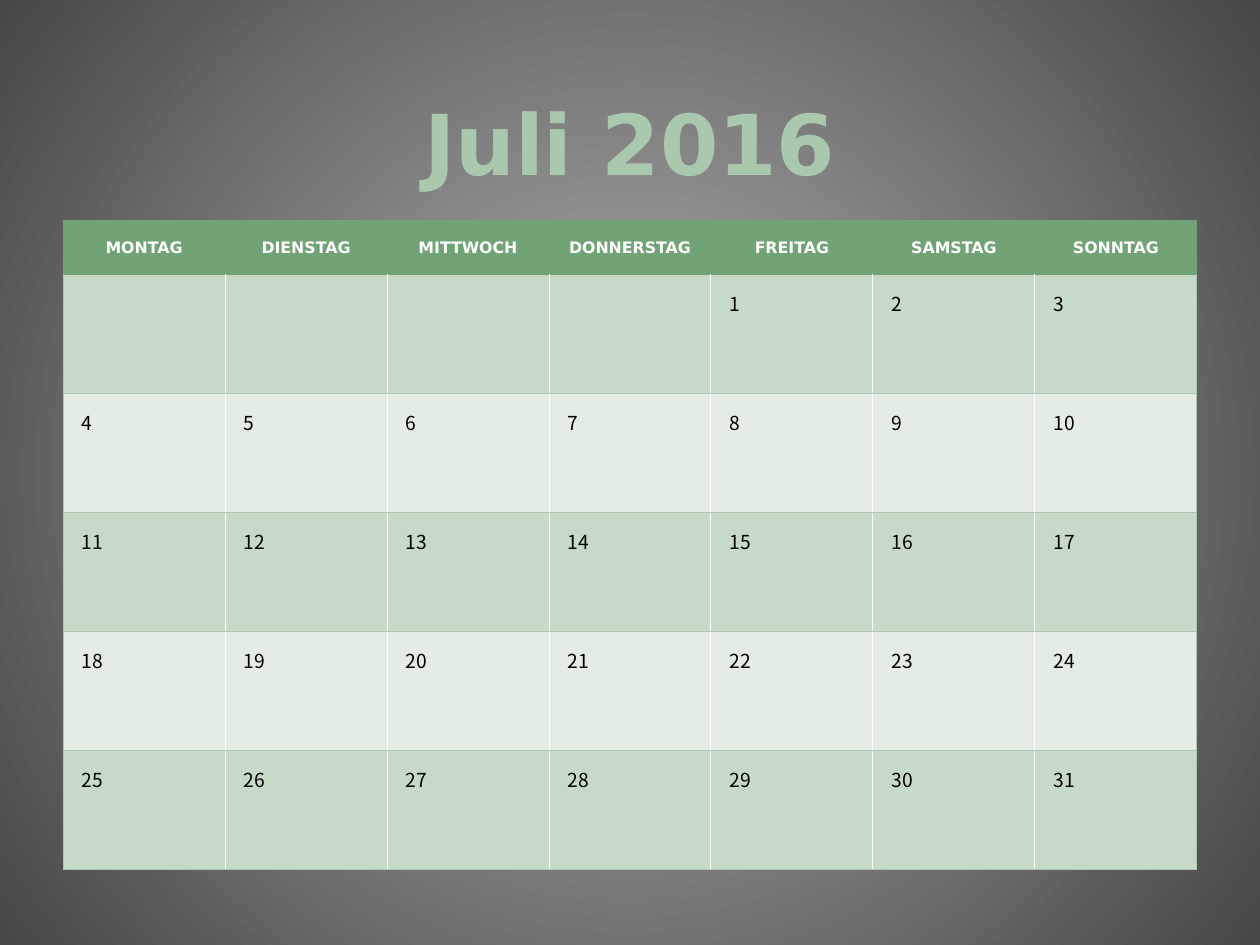
import dataclasses

import lxml.etree
import pptx
import pptx.dml.color
import pptx.enum.text
import pptx.oxml.ns
import pptx.util

WEEKDAYS = ["MONTAG", "DIENSTAG", "MITTWOCH", "DONNERSTAG", "FREITAG", "SAMSTAG", "SONNTAG"]
WEEKS = 5
FIRST_WEEKDAY = 4  # the month begins on a Friday
DAYS = 31


@dataclasses.dataclass(frozen=True)
class Theme:
    heading_font: str = "DejaVu Sans"
    day_font: str = "Noto Sans CJK SC"
    title_size: float = 48
    weekday_size: float = 9
    day_size: float = 11
    rule_width: float = 0.5
    centre: str = "B1B1B1"
    edge: str = "474747"
    header: str = "72A376"
    accent: str = "AAC8AD"
    bands: tuple = ("C7DAC8", "E3EDE4")
    white: str = "FFFFFF"
    black: str = "000000"


THEME = Theme()


def rgb(value):
    return pptx.dml.color.RGBColor.from_string(value)


def add_span(para, text, font, size, colour, bold=False):
    span = para.add_run()
    span.text = text
    span.font.name = font
    span.font.size = pptx.util.Pt(size)
    span.font.bold = bold
    span.font.color.rgb = rgb(colour)


def set_borders(cell, left, right, top, bottom):
    """Colour the four sides of a cell; None leaves a side without a line."""
    properties = cell._tc.get_or_add_tcPr()
    for place, (side, colour) in enumerate(zip("LRTB", (left, right, top, bottom))):
        line = lxml.etree.Element(pptx.oxml.ns.qn(f"a:ln{side}"))
        line.set("w", str(pptx.util.Pt(THEME.rule_width)))
        if colour is None:
            lxml.etree.SubElement(line, pptx.oxml.ns.qn("a:noFill"))
        else:
            fill = lxml.etree.SubElement(line, pptx.oxml.ns.qn("a:solidFill"))
            lxml.etree.SubElement(fill, pptx.oxml.ns.qn("a:srgbClr"), val=colour)
        properties.insert(place, line)


def paint_background(page):
    fill = page.background.fill
    fill.gradient()
    for stop, colour, position in zip(fill.gradient_stops, (THEME.centre, THEME.edge), (0, 1)):
        stop.color.rgb = rgb(colour)
        stop.position = position
    # Turn the linear gradient into a circular one around the middle
    gradient = page._element.find(".//" + pptx.oxml.ns.qn("a:gradFill"))
    linear = gradient.find(pptx.oxml.ns.qn("a:lin"))
    circle = lxml.etree.Element(pptx.oxml.ns.qn("a:path"), path="circle")
    lxml.etree.SubElement(circle, pptx.oxml.ns.qn("a:fillToRect"),
                          l="50000", t="50000", r="50000", b="50000")
    gradient.replace(linear, circle)


def place_title(page, box, text):
    title = page.shapes.title
    title.left, title.top, title.width, title.height = box
    frame = title.text_frame
    frame.auto_size = pptx.enum.text.MSO_AUTO_SIZE.NONE
    frame.vertical_anchor = pptx.enum.text.MSO_ANCHOR.BOTTOM
    para = frame.paragraphs[0]
    para.alignment = pptx.enum.text.PP_ALIGN.CENTER
    add_span(para, text, THEME.heading_font, THEME.title_size, THEME.accent, bold=True)


def fill_weekday(cell, column, name):
    cell.fill.solid()
    cell.fill.fore_color.rgb = rgb(THEME.header)
    cell.vertical_anchor = pptx.enum.text.MSO_ANCHOR.MIDDLE
    para = cell.text_frame.paragraphs[0]
    para.alignment = pptx.enum.text.PP_ALIGN.CENTER
    add_span(para, name, THEME.heading_font, THEME.weekday_size, THEME.white, bold=True)
    set_borders(cell,
                THEME.header if column == 0 else None,
                THEME.header if column == len(WEEKDAYS) - 1 else None,
                THEME.header, THEME.header)


def fill_day(cell, week, column):
    cell.fill.solid()
    cell.fill.fore_color.rgb = rgb(THEME.bands[week % 2])
    day = week * len(WEEKDAYS) + column - FIRST_WEEKDAY + 1
    if 1 <= day <= DAYS:
        para = cell.text_frame.paragraphs[0]
        para.line_spacing = 1.3
        para._p.get_or_add_pPr().set("marL", str(pptx.util.Inches(0.05)))
        add_span(para, str(day), THEME.day_font, THEME.day_size, THEME.black)
    set_borders(cell,
                THEME.accent if column == 0 else THEME.white,
                THEME.accent if column == len(WEEKDAYS) - 1 else THEME.white,
                THEME.header if week == 0 else THEME.accent,
                THEME.accent)


def place_calendar(page, box, header_height):
    table = page.shapes.add_table(WEEKS + 1, len(WEEKDAYS), *box).table
    table.first_row = False
    table.horz_banding = False

    # Grid: equal columns, and equal weeks below the header
    for column in table.columns:
        column.width = round(box[2] / len(WEEKDAYS))
    for index, row in enumerate(table.rows):
        row.height = round((box[3] - header_height) / WEEKS) if index else header_height

    # Cells
    for column, name in enumerate(WEEKDAYS):
        fill_weekday(table.cell(0, column), column, name)
        for week in range(WEEKS):
            fill_day(table.cell(week + 1, column), week, column)


def main():
    deck = pptx.Presentation()
    deck.slide_width = pptx.util.Inches(10)
    deck.slide_height = pptx.util.Inches(7.5)
    page = deck.slides.add_slide(deck.slide_layouts[5])

    margin = pptx.util.Inches(0.5)
    width = deck.slide_width - 2 * margin
    paint_background(page)
    place_title(page, (margin, pptx.util.Inches(0.33), width, pptx.util.Inches(1.25)), "Juli 2016")
    place_calendar(page, (margin, pptx.util.Inches(1.75), width, pptx.util.Inches(5.15)),
                   pptx.util.Inches(0.43))
    deck.save("out.pptx")


if __name__ == "__main__":
    main()
